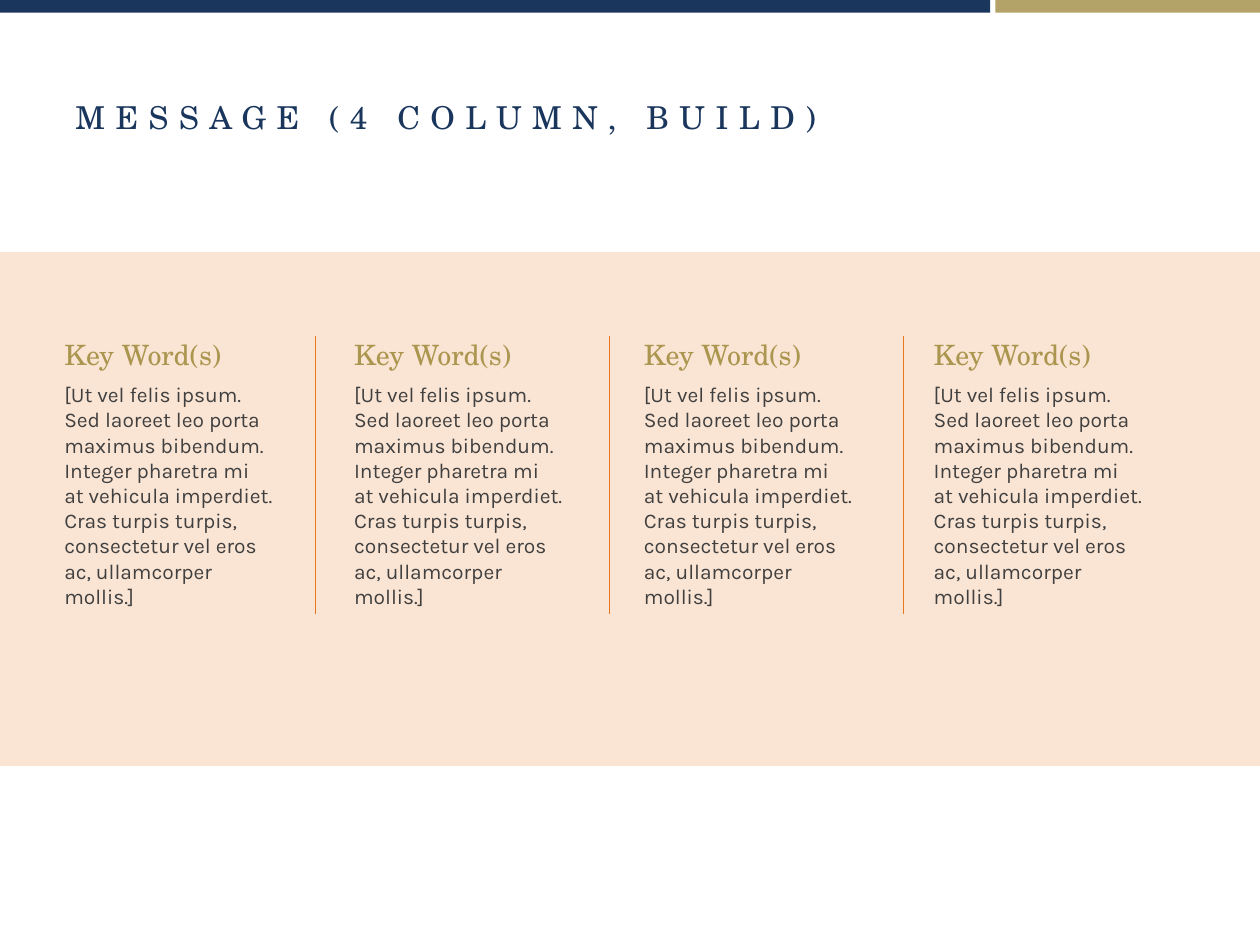
"""Build a slide with a title over four key word columns."""
import copy
from dataclasses import dataclass

import pptx
import pptx.dml.color
import pptx.enum.shapes
import pptx.enum.text
import pptx.oxml.ns
import pptx.util

Inches = pptx.util.Inches
SERIF = "TeX Gyre Schola"
SANS = "Karla"
HEAD = "Key Word(s)"
BODY = (
    "[Ut vel felis ipsum. \n"
    "Sed laoreet leo porta maximus bibendum. Integer pharetra mi \n"
    "at vehicula imperdiet. Cras turpis turpis, consectetur vel eros \n"
    "ac, ullamcorper mollis.]"
)


@dataclass
class Box:
    left: float
    top: float
    width: float
    height: float

    def place(self) -> tuple:
        return tuple(map(Inches, (self.left, self.top, self.width, self.height)))


@dataclass
class Band:
    box: Box
    fill: str


BANDS = [
    Band(Box(0, 0, 7.86, 0.1), "1B365D"),
    Band(Box(7.9, 0, 2.1, 0.1), "B3A369"),
    Band(Box(0, 2, 10, 4.08), "FAE4D3"),
]
TITLE = Box(0.5, 0.3, 9, 1.25)
COLUMNS = [Box(0.42 + 2.3 * i, 2.67, 1.85, 2.67) for i in range(4)]
RULES = [2.5 + 7 / 3 * i for i in range(3)]


def color(code: str) -> pptx.dml.color.RGBColor:
    return pptx.dml.color.RGBColor.from_string(code)


def draw_band(slide, band: Band) -> None:
    kind = pptx.enum.shapes.MSO_SHAPE.RECTANGLE
    shape = slide.shapes.add_shape(kind, *band.box.place())
    shape.shadow.inherit = False
    shape.fill.solid()
    shape.fill.fore_color.rgb = color(band.fill)
    shape.line.fill.background()


def draw_rule(slide, left: float) -> None:
    kind = pptx.enum.shapes.MSO_CONNECTOR.STRAIGHT
    ends = map(Inches, (left, 4.87, left, 2.67))
    rule = slide.shapes.add_connector(kind, *ends)
    rule.line.color.rgb = color("E87721")
    rule.line.width = pptx.util.Pt(0.5)
    rule._element.spPr.add_effectLst() if hasattr(
        rule._element.spPr, "add_effectLst"
    ) else rule._element.spPr.append(pptx.oxml.parse_xml(
        f'<a:effectLst {pptx.oxml.ns.nsdecls("a")}/>'
    ))


def add_frame(slide, box: Box, inset: tuple, anchor):
    frame = slide.shapes.add_textbox(*box.place()).text_frame
    frame.word_wrap = True
    frame.vertical_anchor = anchor
    (frame.margin_left, frame.margin_top,
     frame.margin_right, frame.margin_bottom) = map(Inches, inset)
    return frame


def write(para, text: str, *, face: str, size: float, ink: str,
          before: float = 0, track: float = 0) -> None:
    para.text = text
    para.space_before = pptx.util.Pt(before)
    for run in para.runs:
        run.font.name = face
        run.font.size = pptx.util.Pt(size)
        run.font.color.rgb = color(ink)
        if track:
            run.font._element.set("spc", str(int(track * 100)))
    style = para.runs[0].font._element
    for mark in para._p.findall(pptx.oxml.ns.qn("a:br")):
        mark.insert(0, copy.deepcopy(style))


def draw_column(slide, box: Box) -> None:
    top = pptx.enum.text.MSO_ANCHOR.TOP
    frame = add_frame(slide, box, (0.09, 0.01, 0.09, 0.05), top)
    write(frame.paragraphs[0], HEAD, face=SERIF, size=16, ink="AB964F")
    write(frame.add_paragraph(), BODY, face=SANS, size=12, ink="404040", before=6)


def main() -> None:
    deck = pptx.Presentation()
    deck.slide_width, deck.slide_height = Inches(10), Inches(7.5)
    slide = deck.slides.add_slide(deck.slide_layouts[6])
    for band in BANDS:
        draw_band(slide, band)
    middle = pptx.enum.text.MSO_ANCHOR.MIDDLE
    frame = add_frame(slide, TITLE, (0.1, 0.05, 0.1, 0.05), middle)
    write(frame.paragraphs[0], "MESSAGE (4 COLUMN, BUILD)",
          face=SERIF, size=18, ink="1A365D", track=6)
    for box in COLUMNS:
        draw_column(slide, box)
    for left in RULES:
        draw_rule(slide, left)
    deck.save("out.pptx")


if __name__ == "__main__":
    main()
